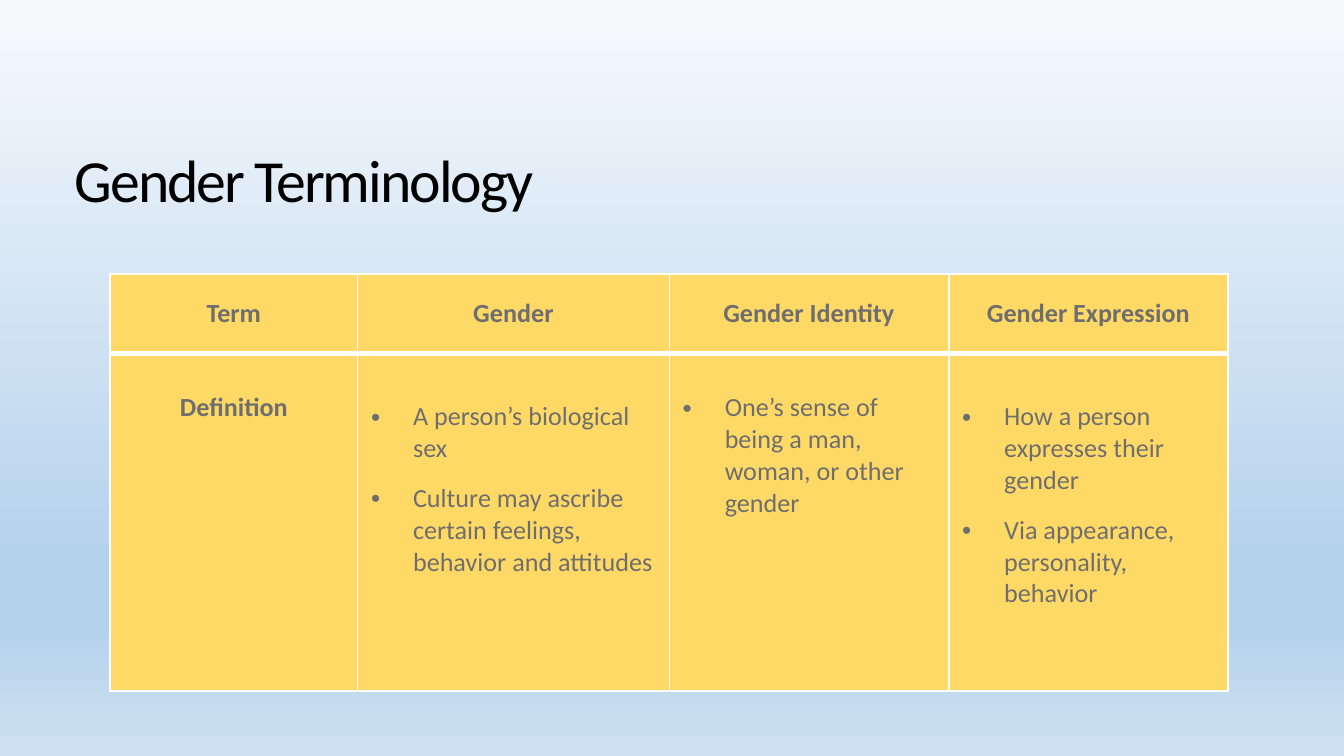
from copy import deepcopy
from dataclasses import dataclass

from lxml import etree
from pptx import Presentation
from pptx.dml.color import RGBColor
from pptx.enum.text import MSO_ANCHOR, PP_ALIGN
from pptx.oxml.ns import qn
from pptx.slide import Slide
from pptx.table import _Cell
from pptx.util import Pt

CENTER, LEFT = PP_ALIGN.CENTER, PP_ALIGN.LEFT
TOP, MIDDLE, BOTTOM = MSO_ANCHOR.TOP, MSO_ANCHOR.MIDDLE, MSO_ANCHOR.BOTTOM

FONT = "Calibri"
BLACK = RGBColor(0x00, 0x00, 0x00)
GRAY = RGBColor(0x6E, 0x6E, 0x6E)
YELLOW = RGBColor(0xFF, 0xD9, 0x66)
WHITE = RGBColor(0xFF, 0xFF, 0xFF)
SKY_STOPS = (
    (0, RGBColor(0xF7, 0xFA, 0xFD)),
    (0.74, RGBColor(0xB5, 0xD2, 0xEC)),
    (0.83, RGBColor(0xB5, 0xD2, 0xEC)),
    (1, RGBColor(0xCE, 0xE1, 0xF2)),
)

COLUMN_WIDTHS = (132.6, 167, 149.7, 149.7)
ROW_HEIGHTS = (42.5, 180.7)
BODY_MARGIN = 20.7
BULLET_INDENT = 22.5
THIN, THICK = 1, 3


@dataclass(frozen=True)
class CellContent:
    paragraphs: tuple[str, ...]
    bold: bool = False
    bulleted: bool = False
    anchor: MSO_ANCHOR = TOP
    margin_top: float = BODY_MARGIN
    gap: float = 0


def header(text: str) -> CellContent:
    return CellContent((text,), bold=True, anchor=MIDDLE, margin_top=3.6)


def definition(*paragraphs: str, gap: float = 4.8) -> CellContent:
    """Bulleted cell whose top margin includes the gap above its first item."""
    return CellContent(paragraphs, bulleted=True,
                       margin_top=BODY_MARGIN + gap, gap=gap)


ROWS = (
    (header("Term"), header("Gender"), header("Gender Identity"),
     header("Gender Expression")),
    (
        CellContent(("Definition",), bold=True),
        definition("A person’s biological sex",
                   "Culture may ascribe certain feelings, behavior and attitudes"),
        definition("One’s sense of being a man, woman, or other gender", gap=0),
        definition("How a person expresses their gender",
                   "Via appearance, personality, behavior"),
    ),
)


def paint_background(slide: Slide) -> None:
    fill = slide.background.fill
    fill.gradient()
    fill.gradient_angle = 270
    stop_list = slide.element.find(".//" + qn("a:gsLst"))
    while len(stop_list) < len(SKY_STOPS):
        stop_list.append(deepcopy(stop_list[0]))
    for stop, (position, color) in zip(fill.gradient_stops, SKY_STOPS):
        stop.position = position
        stop.color.rgb = color


def add_title(slide: Slide, text: str) -> None:
    frame = slide.shapes.add_textbox(Pt(33), Pt(79.2), Pt(288), Pt(39)).text_frame
    frame.word_wrap = True
    frame.vertical_anchor = BOTTOM
    paragraph = frame.paragraphs[0]
    paragraph.line_spacing = 0.8
    run = paragraph.add_run()
    run.text = text
    run.font.name = FONT
    run.font.size = Pt(32)
    run.font.color.rgb = BLACK
    run.font._element.set("spc", "-110")


def set_borders(cell: _Cell, top: float, bottom: float) -> None:
    properties = cell._tc.get_or_add_tcPr()
    widths = {"lnL": THIN, "lnR": THIN, "lnT": top, "lnB": bottom}
    for index, (tag, width) in enumerate(widths.items()):
        line = etree.Element(qn(f"a:{tag}"), w=str(Pt(width)))
        solid = etree.SubElement(line, qn("a:solidFill"))
        etree.SubElement(solid, qn("a:srgbClr"), val=str(WHITE))
        properties.insert(index, line)


def fill_cell(cell: _Cell, content: CellContent) -> None:
    cell.fill.solid()
    cell.fill.fore_color.rgb = YELLOW
    cell.vertical_anchor = content.anchor
    cell.margin_top = Pt(content.margin_top)
    frame = cell.text_frame
    for index, text in enumerate(content.paragraphs):
        paragraph = frame.add_paragraph() if index else frame.paragraphs[0]
        paragraph.alignment = LEFT if content.bulleted else CENTER
        if index:
            paragraph.space_before = Pt(content.gap)
        paragraph.space_after = Pt(content.gap)
        if content.bulleted:
            properties = paragraph._p.get_or_add_pPr()
            properties.set("marL", str(Pt(BULLET_INDENT)))
            properties.set("indent", str(-Pt(BULLET_INDENT)))
            etree.SubElement(properties, qn("a:buFont"), typeface="Arial")
            etree.SubElement(properties, qn("a:buChar"), char="•")
        run = paragraph.add_run()
        run.text = text
        run.font.name = FONT
        run.font.size = Pt(14)
        run.font.bold = content.bold
        run.font.color.rgb = GRAY


def add_terms_table(slide: Slide) -> None:
    table = slide.shapes.add_table(
        len(ROWS), len(COLUMN_WIDTHS), Pt(59), Pt(146.9),
        Pt(sum(COLUMN_WIDTHS)), Pt(sum(ROW_HEIGHTS)),
    ).table
    for column, width in zip(table.columns, COLUMN_WIDTHS):
        column.width = Pt(width)
    for row, height in zip(table.rows, ROW_HEIGHTS):
        row.height = Pt(height)
    for row_index, contents in enumerate(ROWS):
        top, bottom = (THICK, THIN) if row_index else (THIN, THICK)
        for column_index, content in enumerate(contents):
            cell = table.cell(row_index, column_index)
            fill_cell(cell, content)
            set_borders(cell, top, bottom)


def main() -> None:
    presentation = Presentation()
    presentation.slide_width = Pt(720)
    presentation.slide_height = Pt(405)
    slide = presentation.slides.add_slide(presentation.slide_layouts[6])
    paint_background(slide)
    add_title(slide, "Gender Terminology")
    add_terms_table(slide)
    presentation.save("out.pptx")


if __name__ == "__main__":
    main()
